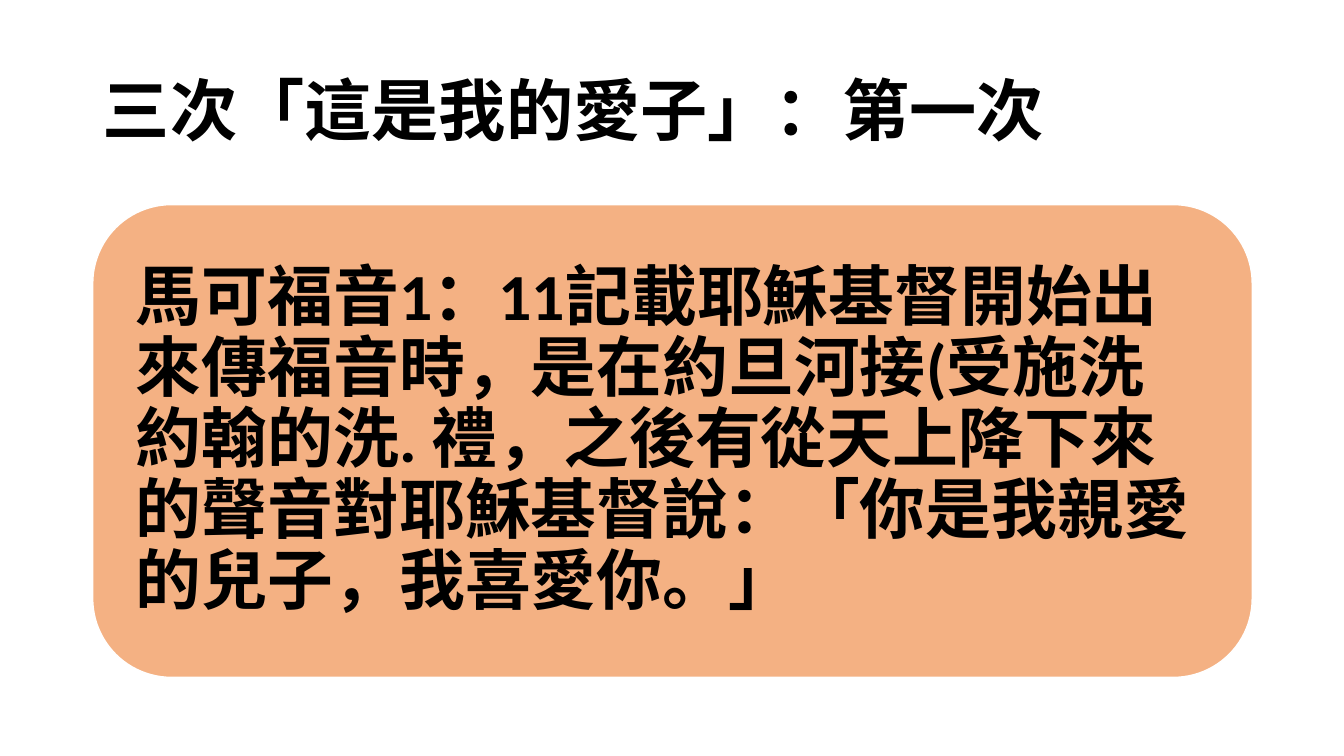
from pptx import Presentation
from pptx.dml.color import RGBColor
from pptx.enum.shapes import MSO_SHAPE
from pptx.enum.text import MSO_ANCHOR, PP_ALIGN
from pptx.util import Inches, Pt

COLORS = {"ink": "000000", "card": "F4B183", "edge": "FFFFFF"}
FONT = "Calibri"
WIDE, HIGH = 13.33, 7.5
LEFT, SPAN = 0.92, 11.5

TITLE = "三次「這是我的愛子」：第一次"
VERSE = ("馬可福音1：11記載耶穌基督開始出來傳福音時，是在約旦河接"
         "(受施洗約翰的洗. 禮，之後有從天上降下來的聲音對耶穌基督說："
         "「你是我親愛的兒子，我喜愛你。」")


def color(name):
    return RGBColor.from_string(COLORS[name])


def write(shape, text, size):
    frame = shape.text_frame
    frame.word_wrap = True
    frame.vertical_anchor = MSO_ANCHOR.MIDDLE
    frame.text = text
    para = frame.paragraphs[0]
    para.alignment = PP_ALIGN.LEFT
    para.line_spacing = 0.9
    font = para.font
    font.name, font.size, font.bold = FONT, Pt(size), True
    font.color.rgb = color("ink")
    return frame


def add_title(slide, box):
    title = slide.shapes.title
    title.left, title.top, title.width, title.height = map(Inches, box)
    write(title, TITLE, 48)


def add_card(slide, box):
    card = slide.shapes.add_shape(MSO_SHAPE.ROUNDED_RECTANGLE,
                                  *map(Inches, box))
    card.shadow.inherit = False
    card.fill.solid()
    card.fill.fore_color.rgb = color("card")
    card.line.color.rgb = color("edge")
    card.line.width = Pt(1)
    frame = write(card, VERSE, 47)
    frame.margin_left = frame.margin_right = Inches(0.2)
    frame.margin_top = frame.margin_bottom = Inches(0.2)


def main():
    deck = Presentation()
    deck.slide_width, deck.slide_height = Inches(WIDE), Inches(HIGH)
    slide = deck.slides.add_slide(deck.slide_layouts[5])
    add_title(slide, (LEFT, 0.4, SPAN, 1.45))
    add_card(slide, (LEFT, 2.03, SPAN, 4.69))
    deck.save("out.pptx")


if __name__ == "__main__":
    main()
